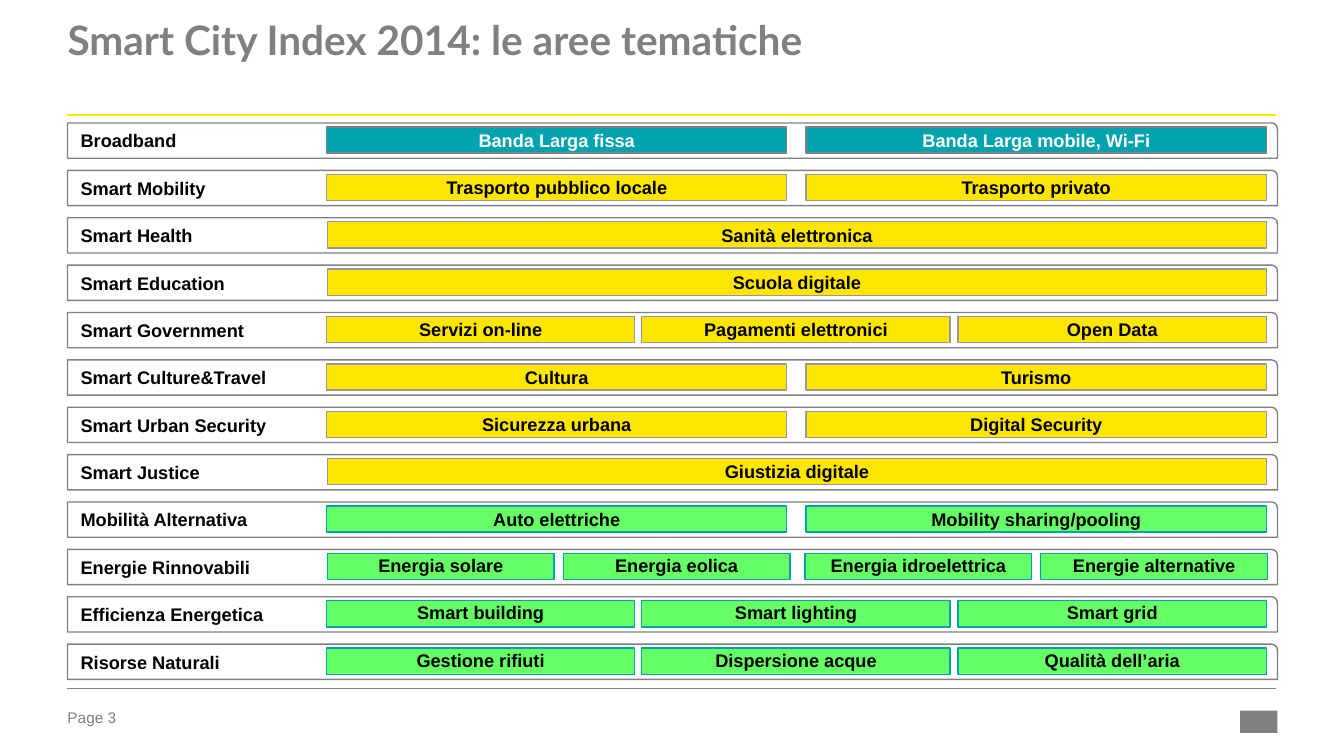
import pptx
import pptx.util
import pptx.dml.color
import pptx.enum.shapes
import pptx.enum.text
import pptx.oxml.ns
import lxml.etree

Inches = pptx.util.Inches
Pt = pptx.util.Pt
MSO_SHAPE = pptx.enum.shapes.MSO_SHAPE
ALIGN = pptx.enum.text.PP_ALIGN
ANCHOR = pptx.enum.text.MSO_ANCHOR

GRAY = "808080"
YELLOW = "FFE600"
TEAL = "00A3AE"
BLACK = "000000"

STYLES = {
    "broadband": (TEAL, GRAY, "FFFFFF"),
    "smart": (YELLOW, "999999", BLACK),
    "green": ("66FF66", TEAL, BLACK),
}
COLUMNS = {
    1: (9.32, [3.25]),
    2: (4.57, [3.24, 8]),
    3: (3.06, [3.24, 6.37, 9.51]),
    4: (2.25, [3.25, 5.59, 7.99, 10.33]),
}
AREAS = [
    ("Broadband", "broadband", ["Banda Larga fissa", "Banda Larga mobile, Wi-Fi"]),
    ("Smart Mobility", "smart", ["Trasporto pubblico locale", "Trasporto privato"]),
    ("Smart Health", "smart", ["Sanità elettronica"]),
    ("Smart Education", "smart", ["Scuola digitale"]),
    ("Smart Government", "smart", ["Servizi on-line", "Pagamenti elettronici", "Open Data"]),
    ("Smart Culture&Travel", "smart", ["Cultura", "Turismo"]),
    ("Smart Urban Security", "smart", ["Sicurezza urbana", "Digital Security"]),
    ("Smart Justice", "smart", ["Giustizia digitale"]),
    ("Mobilità Alternativa", "green", ["Auto elettriche", "Mobility sharing/pooling"]),
    ("Energie Rinnovabili", "green",
     ["Energia solare", "Energia eolica", "Energia idroelettrica", "Energie alternative"]),
    ("Efficienza Energetica", "green", ["Smart building", "Smart lighting", "Smart grid"]),
    ("Risorse Naturali", "green", ["Gestione rifiuti", "Dispersione acque", "Qualità dell’aria"]),
]
ROW_TOP = 1.22
ROW_PITCH = 0.47
BAR_OFFSET = 0.04


def rgb(color):
    return pptx.dml.color.RGBColor.from_string(color)


def write(sp, text, size, color, font="Arial", bold=True, align=ALIGN.LEFT,
          anchor=ANCHOR.MIDDLE, inset=(0, 0), spacing=None):
    tf = sp.text_frame
    tf.word_wrap = True
    tf.auto_size = pptx.enum.text.MSO_AUTO_SIZE.NONE
    tf.vertical_anchor = anchor
    tf.margin_left = tf.margin_right = Inches(inset[0])
    tf.margin_top = tf.margin_bottom = Inches(inset[1])
    p = tf.paragraphs[0]
    p.alignment = align
    if spacing:
        p.line_spacing = spacing
    r = p.add_run()
    r.text = text
    r.font.name = font
    r.font.size = Pt(size)
    r.font.bold = bold
    r.font.color.rgb = rgb(color)


def add_box(s, kind, x, y, w, h, fill=None, line=None):
    sp = s.shapes.add_shape(kind, Inches(x), Inches(y), Inches(w), Inches(h))
    sp.shadow.inherit = False
    if fill:
        sp.fill.solid()
        sp.fill.fore_color.rgb = rgb(fill)
    else:
        sp.fill.background()
    if line:
        sp.line.color.rgb = rgb(line)
        sp.line.width = Pt(1)
    else:
        sp.line.fill.background()
    return sp


def add_rule(s, y, color, width):
    ln = s.shapes.add_connector(pptx.enum.shapes.MSO_CONNECTOR.STRAIGHT,
                                Inches(0.67), Inches(y), Inches(12.67), Inches(y))
    ln.line.color.rgb = rgb(color)
    ln.line.width = Pt(width)
    lxml.etree.SubElement(ln._element.spPr, pptx.oxml.ns.qn("a:effectLst"))


def add_title(s, text):
    sp = s.shapes.title
    sp.left, sp.top = Inches(0.67), Inches(0.22)
    sp.width, sp.height = Inches(12.01), Inches(0.94)
    write(sp, text, 29, GRAY, font="Lato", anchor=ANCHOR.TOP, spacing=0.85)


def add_area(s, y, name, style, topics):
    frame = add_box(s, MSO_SHAPE.ROUND_1_RECTANGLE, 0.67, y, 12.01, 0.35, line=GRAY)
    write(frame, name, 13, BLACK, inset=(0.13, 0.07))
    fill, line, color = STYLES[style]
    width, lefts = COLUMNS[len(topics)]
    spacing = 0.9 if style == "green" and len(topics) > 2 else None
    for x, topic in zip(lefts, topics):
        bar = add_box(s, MSO_SHAPE.RECTANGLE, x, y + BAR_OFFSET, width, 0.26, fill, line)
        write(bar, topic, 13, color, align=ALIGN.CENTER, inset=(0.1, 0.05), spacing=spacing)


def add_footer(s):
    sp = s.shapes.add_textbox(Inches(0.67), Inches(7.02), Inches(0.97), Inches(0.22))
    write(sp, "Page 3", 11, GRAY, bold=False, anchor=ANCHOR.TOP)
    add_box(s, MSO_SHAPE.RECTANGLE, 12.31, 7.05, 0.37, 0.22, fill=GRAY)


def main():
    prs = pptx.Presentation()
    prs.slide_width = Inches(13.34)
    prs.slide_height = Inches(7.5)
    s = prs.slides.add_slide(prs.slide_layouts[5])
    add_title(s, "Smart City Index 2014: le aree tematiche")
    add_rule(s, 1.14, YELLOW, 1.5)
    add_rule(s, 6.83, GRAY, 0.25)
    for i, (name, style, topics) in enumerate(AREAS):
        add_area(s, ROW_TOP + i * ROW_PITCH, name, style, topics)
    add_footer(s)
    prs.save("out.pptx")


if __name__ == "__main__":
    main()
